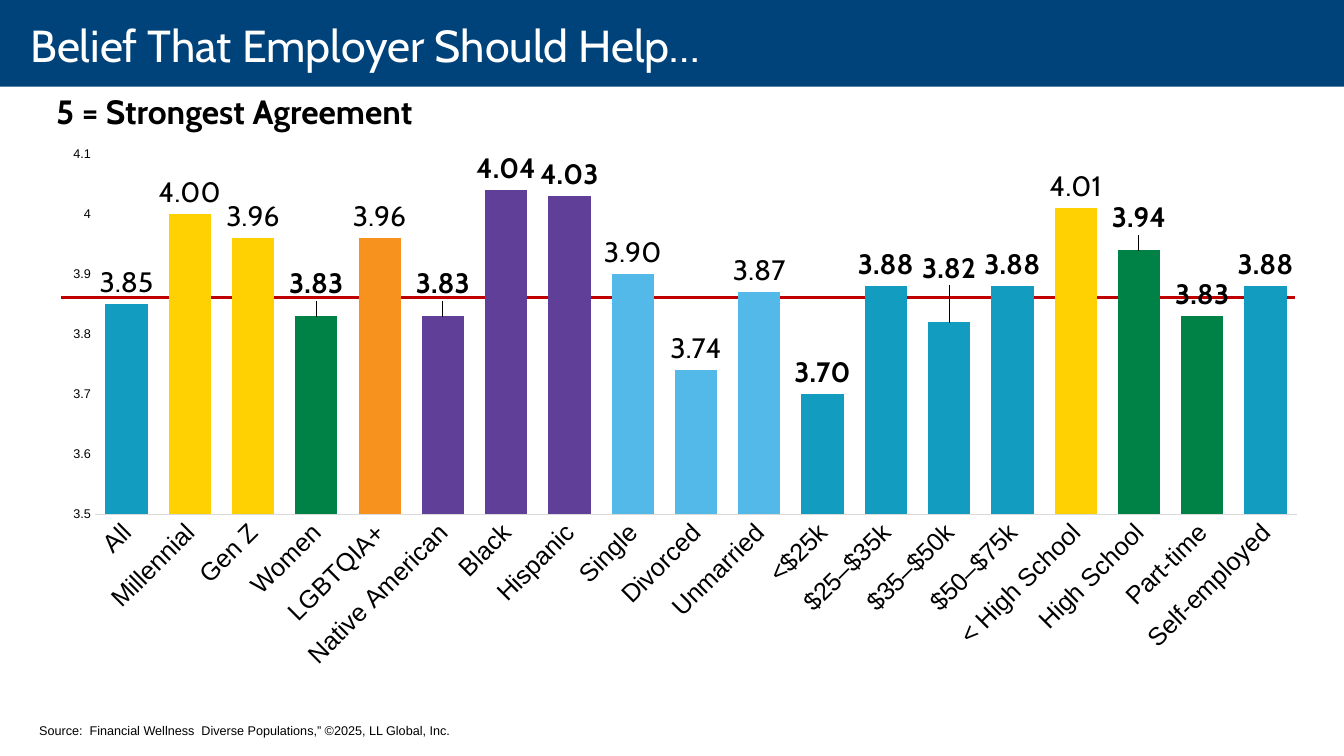
from lxml import etree
from pptx import Presentation
from pptx.chart.data import CategoryChartData
from pptx.dml.color import RGBColor
from pptx.enum.chart import XL_CHART_TYPE, XL_LABEL_POSITION, XL_TICK_MARK
from pptx.enum.shapes import MSO_CONNECTOR, MSO_SHAPE
from pptx.enum.text import MSO_ANCHOR, PP_ALIGN
from pptx.oxml.ns import qn
from pptx.util import Inches, Pt

COLUMNS = XL_CHART_TYPE.COLUMN_CLUSTERED
OUTSIDE_END = XL_LABEL_POSITION.OUTSIDE_END
NO_TICKS = XL_TICK_MARK.NONE
STRAIGHT = MSO_CONNECTOR.STRAIGHT
RECTANGLE = MSO_SHAPE.RECTANGLE
MIDDLE = MSO_ANCHOR.MIDDLE
LEFT = PP_ALIGN.LEFT

TEAL, YELLOW, GREEN = "129DC0", "FFD103", "008145"
ORANGE, PURPLE, SKY = "F7921E", "603F99", "52B9E9"

GROUPS = [
    ("All", 3.85, TEAL), ("Millennial", 4.00, YELLOW), ("Gen Z", 3.96, YELLOW),
    ("Women", 3.83, GREEN), ("LGBTQIA+", 3.96, ORANGE),
    ("Native American", 3.83, PURPLE), ("Black", 4.04, PURPLE),
    ("Hispanic", 4.03, PURPLE), ("Single", 3.90, SKY), ("Divorced", 3.74, SKY),
    ("Unmarried", 3.87, SKY), ("<$25k", 3.70, TEAL), ("$25–$35k", 3.88, TEAL),
    ("$35–$50k", 3.82, TEAL), ("$50–$75k", 3.88, TEAL),
    ("< High School", 4.01, YELLOW), ("High School", 3.94, GREEN),
    ("Part-time", 3.83, GREEN), ("Self-employed", 3.88, TEAL),
]
LIGHT_LABELS = {"All", "Millennial", "Gen Z", "LGBTQIA+", "Single", "Divorced",
                "Unmarried", "< High School"}
RAISED_LABELS = {"Women": -0.02, "Native American": -0.02,
                 "$35–$50k": -0.06, "High School": -0.02}


def color(value):
    return RGBColor.from_string(value)


class BeliefSlide:
    """Builds the slide's elements in one shared style."""

    heading_font = "Cabin"
    body_font = "Arial"
    black = "000000"

    def __init__(self, deck):
        self.page = deck.slides.add_slide(deck.slide_layouts[5])

    def style(self, font, size, name, fill=black, bold=False):
        font.size, font.name, font.bold = Pt(size), name, bold
        font.color.rgb = color(fill)

    def place(self, shape, left, top, width, height):
        shape.left, shape.top = Inches(left), Inches(top)
        shape.width, shape.height = Inches(width), Inches(height)

    def band(self, left, top, width, height, fill):
        band = self.page.shapes.add_shape(
            RECTANGLE, Inches(left), Inches(top), Inches(width), Inches(height))
        band.shadow.inherit = False
        band.fill.solid()
        band.fill.fore_color.rgb = color(fill)
        band.line.fill.background()
        self.page.shapes.title._element.addprevious(band._element)

    def title(self, text, *place):
        title = self.page.shapes.title
        self.place(title, *place)
        frame = title.text_frame
        frame.text = text
        frame.word_wrap = True
        frame.vertical_anchor = MIDDLE
        frame.margin_left, frame.margin_right = Inches(0.3), Inches(0.2)
        frame.margin_top = frame.margin_bottom = 0
        para = frame.paragraphs[0]
        para.alignment = LEFT
        self.style(para.font, 32, self.heading_font, "FFFFFF")

    def text(self, text, left, top, width, height, size, name, bold=False, wrap=True):
        box = self.page.shapes.add_textbox(
            Inches(left), Inches(top), Inches(width), Inches(height))
        box.text_frame.word_wrap = wrap
        box.text_frame.text = text
        self.style(box.text_frame.paragraphs[0].font, size, name, bold=bold)

    def average_line(self, left, right, y):
        line = self.page.shapes.add_connector(
            STRAIGHT, Inches(left), Inches(y), Inches(right), Inches(y))
        line.line.color.rgb = color("C00000")
        line.line.width = Pt(2.25)
        etree.SubElement(line._element.spPr, qn("a:effectLst"))

    def layout(self, **settings):
        layout = etree.Element(qn("c:layout"))
        manual = etree.SubElement(layout, qn("c:manualLayout"))
        for name, value in settings.items():
            etree.SubElement(manual, qn(f"c:{name}")).set("val", str(value))
        return layout

    def chart(self, left, top, width, height):
        data = CategoryChartData()
        data.categories = [name for name, _, _ in GROUPS]
        data.add_series("Series 1", [value for _, value, _ in GROUPS])
        chart = self.page.shapes.add_chart(
            COLUMNS, Inches(left), Inches(top), Inches(width), Inches(height), data).chart
        chart.has_legend = chart.has_title = False
        self.style(chart.font, 10, self.body_font)
        self.axes(chart)
        plot = chart.plots[0]
        plot.gap_width, plot.overlap = 50, -27
        plot.vary_by_categories = False
        self.labels(plot.series[0])
        area = chart._chartSpace.chart.plotArea
        for old in area.findall(qn("c:layout")):
            area.remove(old)
        area.insert(0, self.layout(layoutTarget="inner", xMode="edge", yMode="edge",
                                   x=0.038, y=0.033, w=0.942, h=0.662))

    def axes(self, chart):
        groups, scale = chart.category_axis, chart.value_axis
        for axis, size in ((groups, 18), (scale, 9)):
            axis.major_tick_mark = axis.minor_tick_mark = NO_TICKS
            axis.has_major_gridlines = False
            self.style(axis.tick_labels.font, size, self.body_font)
        groups.format.line.color.rgb = color("D9D9D9")
        groups.format.line.width = Pt(0.75)
        groups._element.find(qn("c:txPr")).find(qn("a:bodyPr")).set("rot", "-2700000")
        scale.format.line.fill.background()
        scale.minimum_scale, scale.maximum_scale, scale.major_unit = 3.5, 4.1, 0.1
        scale.tick_labels.number_format = "General"
        scale.tick_labels.number_format_is_linked = False

    def labels(self, series):
        series.format.fill.solid()
        series.format.fill.fore_color.rgb = color(TEAL)
        labels = series.data_labels
        labels.show_value = True
        labels.position = OUTSIDE_END
        labels.number_format, labels.number_format_is_linked = "0.00", False
        self.style(labels.font, 20, self.heading_font, bold=True)
        for index, (name, value, fill) in enumerate(GROUPS):
            point = series.points[index]
            if fill != TEAL:
                point.format.fill.solid()
                point.format.fill.fore_color.rgb = color(fill)
            if name in LIGHT_LABELS:
                para = point.data_label.text_frame.paragraphs[0]
                span = para.add_run()
                span.text = f"{value:.2f}"
                self.style(span.font, 20, self.heading_font)
                point.data_label.position = OUTSIDE_END
            elif name in RAISED_LABELS:
                self.style(point.data_label.font, 20, self.heading_font, bold=True)
                point.data_label.position = OUTSIDE_END
                marker = series._element.xpath(f'.//c:dLbl/c:idx[@val="{index}"]')[0]
                marker.addnext(self.layout(x=0, y=RAISED_LABELS[name]))


def main():
    deck = Presentation()
    deck.slide_width, deck.slide_height = Inches(13.33), Inches(7.5)
    slide = BeliefSlide(deck)
    slide.band(0, 0, 13.33, 0.86, "00437B")
    slide.average_line(0.61, 12.84, 2.95)
    slide.chart(0.46, 1.35, 12.66, 5.4)
    slide.title("Belief That Employer Should Help…", 0, -0.04, 13.33, 0.97)
    slide.text("5 = Strongest Agreement", 0.46, 0.85, 3.93, 0.5, 24,
               slide.heading_font, bold=True, wrap=False)
    slide.text("Source:  Financial Wellness  Diverse Populations,” ©2025, LL Global, Inc.",
               0.29, 7.12, 5.19, 0.25, 9, slide.body_font)
    deck.save("out.pptx")


if __name__ == "__main__":
    main()
